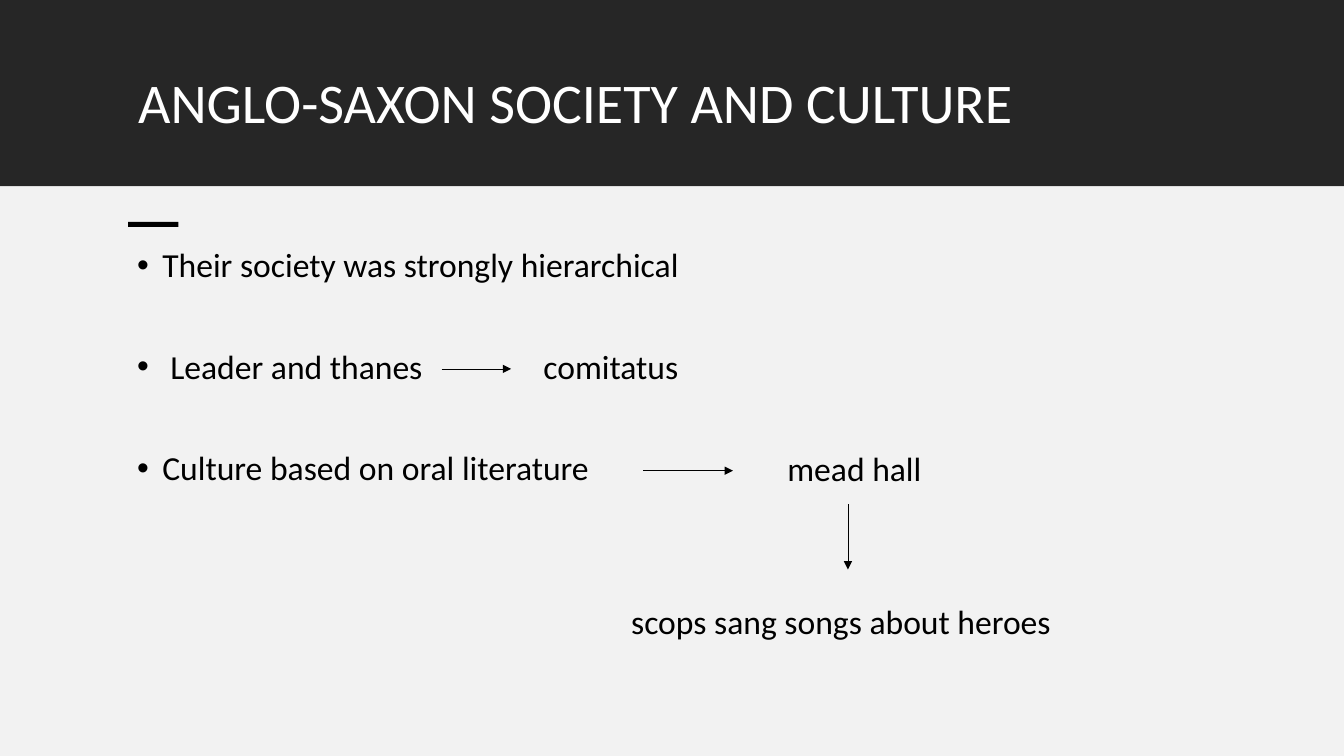
from dataclasses import dataclass

from lxml.etree import SubElement
from pptx import Presentation
from pptx.dml.color import RGBColor
from pptx.enum.shapes import MSO_CONNECTOR as Connector, MSO_SHAPE as Shape
from pptx.enum.text import MSO_ANCHOR as Anchor, PP_ALIGN as Align
from pptx.oxml.ns import qn
from pptx.util import Inches, Pt


@dataclass(frozen=True)
class Theme:
    font: str = "Calibri"
    band: RGBColor = RGBColor(0x26, 0x26, 0x26)
    panel: RGBColor = RGBColor(0xF2, 0xF2, 0xF2)
    ink: RGBColor = RGBColor(0, 0, 0)
    light: RGBColor = RGBColor(255, 255, 255)
    title_size: Pt = Pt(40)
    body_size: Pt = Pt(24)
    line_width: Pt = Pt(0.5)


THEME = Theme()
FIRST_ROW, ROW_STEP = 2.47, 1.01
ROW_GAP = Pt(46.4)

# Each bullet has its text and its hanging indent
BULLETS = [
    ("Their society was strongly hierarchical", 0.25),
    ("Leader and thanes", 0.33),
    ("Culture based on oral literature", 0.25),
]
# Each label has its text, left edge, row and width
LABELS = [
    ("comitatus", 5.39, 1, 2),
    ("mead hall", 7.81, 2, 2),
    ("scops sang songs about heroes", 6.26, 3.5, 5),
]
ARROWS = [
    (4.38, 3.66, 5.07, 3.66),
    (6.38, 4.67, 7.27, 4.67),
    (8.41, 5, 8.41, 5.65),
]


def set_all(target, values):
    for name, value in values.items():
        setattr(target, name, value)


def place(shape, left, top, width, height):
    set_all(shape, {"left": Inches(left), "top": Inches(top),
                    "width": Inches(width), "height": Inches(height)})


def add_block(page, color, *bounds):
    block = page.shapes.add_shape(Shape.RECTANGLE, *map(Inches, bounds))
    block.shadow.inherit = False
    block.fill.solid()
    block.fill.fore_color.rgb = color
    block.line.fill.background()


def write(para, text, size, color):
    set_all(para, {"alignment": Align.LEFT, "line_spacing": 0.9})
    span = para.add_run()
    span.text = text
    set_all(span.font, {"name": THEME.font, "size": size})
    span.font.color.rgb = color


def add_title(page, text):
    title = page.shapes.title
    place(title, 1.27, 0.7, 10.81, 0.98)
    title.text_frame.vertical_anchor = Anchor.TOP
    write(title.text_frame.paragraphs[0], text, THEME.title_size, THEME.light)
    # Bring the title in front of its band
    page.shapes.element.append(title.element)


def add_text_box(page, *bounds):
    frame = page.shapes.add_textbox(*map(Inches, bounds)).text_frame
    set_all(frame, {"word_wrap": True, "vertical_anchor": Anchor.TOP,
                    "margin_left": 0, "margin_right": 0,
                    "margin_top": 0, "margin_bottom": 0})
    return frame


def add_bullets(page, items):
    frame = add_text_box(page, 1.36, FIRST_ROW, 10.61, 4.23)
    for index, (text, indent) in enumerate(items):
        para = frame.add_paragraph() if index else frame.paragraphs[0]
        write(para, text, THEME.body_size, THEME.ink)
        para.space_before = ROW_GAP if index else Pt(0)
        properties = para._p.get_or_add_pPr()
        properties.set("marL", str(Inches(indent)))
        properties.set("indent", str(-Inches(indent)))
        SubElement(properties, qn("a:buFont"), typeface="Arial")
        SubElement(properties, qn("a:buChar"), char="•")


def add_label(page, text, left, row, width):
    frame = add_text_box(page, left, FIRST_ROW + row * ROW_STEP, width, 0.4)
    write(frame.paragraphs[0], text, THEME.body_size, THEME.ink)


def add_arrow(page, *ends):
    arrow = page.shapes.add_connector(Connector.STRAIGHT, *map(Inches, ends))
    arrow.line.color.rgb = THEME.ink
    arrow.line.width = THEME.line_width
    SubElement(arrow.line._get_or_add_ln(), qn("a:tailEnd"), type="triangle")
    SubElement(arrow.element.spPr, qn("a:effectLst"))


def main():
    deck = Presentation()
    set_all(deck, {"slide_width": Inches(13.33), "slide_height": Inches(7.5)})
    page = deck.slides.add_slide(deck.slide_layouts[5])

    # Header band, content panel and accent bar
    add_block(page, THEME.band, 0, 0, 13.33, 1.85)
    add_block(page, THEME.panel, 0, 1.85, 13.33, 5.65)
    add_block(page, THEME.ink, 1.27, 2.2, 0.5, 0.05)
    add_title(page, "ANGLO-SAXON SOCIETY AND CULTURE")

    # Bullets and the ideas they lead to
    add_bullets(page, BULLETS)
    for label in LABELS:
        add_label(page, *label)
    for arrow in ARROWS:
        add_arrow(page, *arrow)

    deck.save("out.pptx")


if __name__ == "__main__":
    main()
